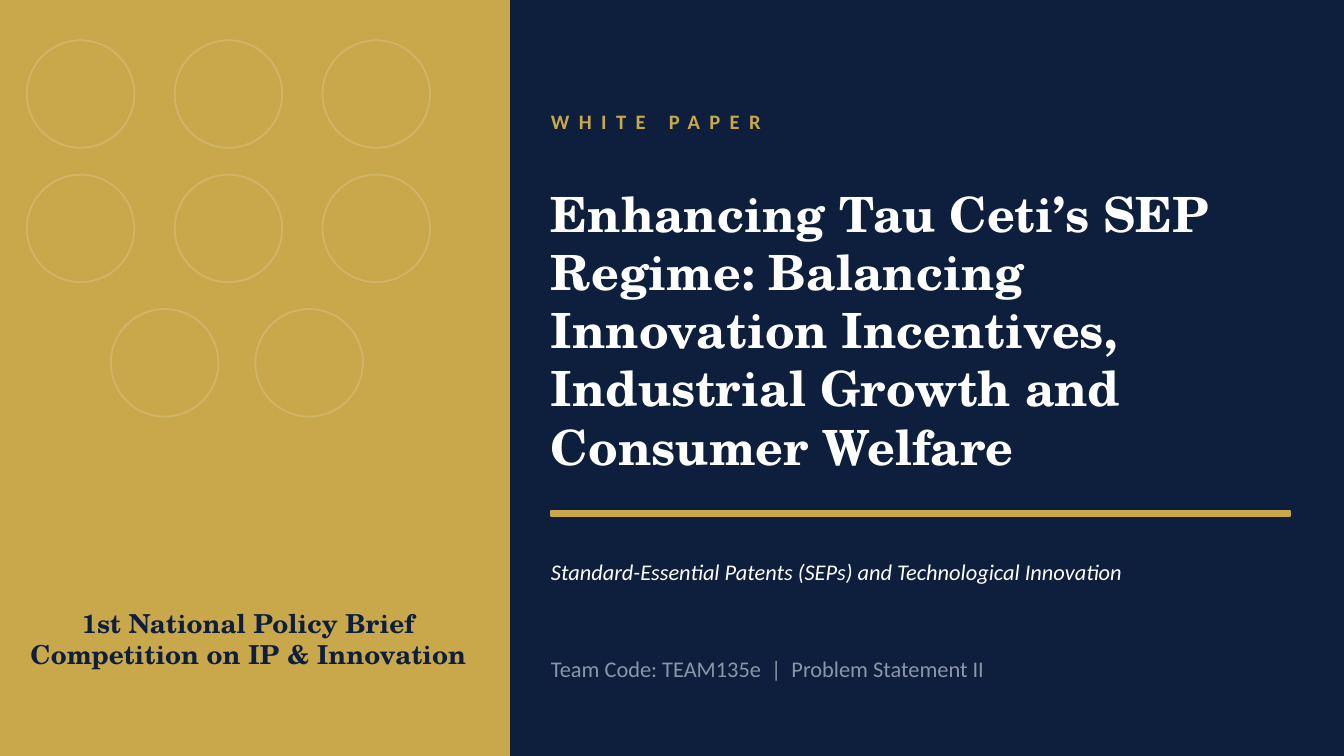
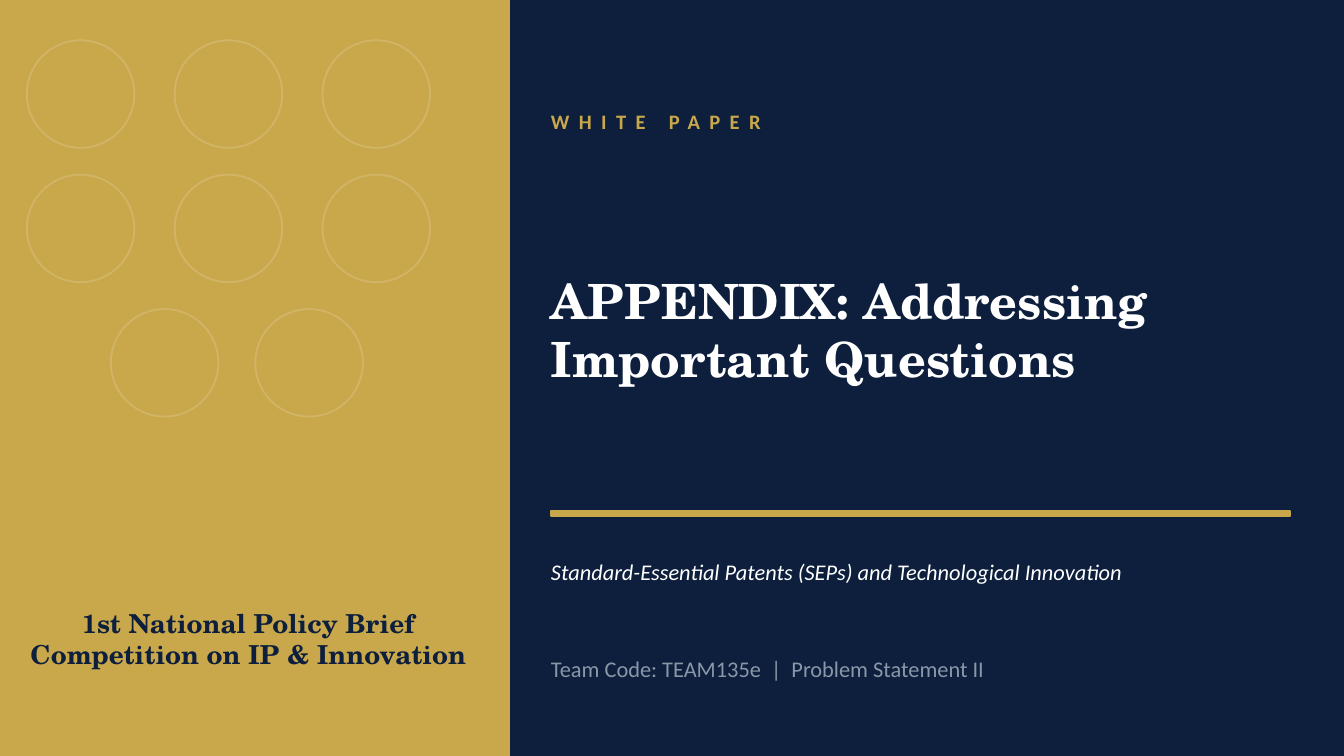
"""Build the white paper title slide and its appendix divider."""
from lxml.etree import SubElement
from pptx import Presentation
from pptx.dml.color import RGBColor
from pptx.enum.shapes import MSO_SHAPE
from pptx.enum.text import MSO_ANCHOR, PP_ALIGN
from pptx.oxml.ns import qn
from pptx.util import Emu, Pt

GOLD, NAVY, WHITE, GREY = "C9A84C", "0D1F3C", "FFFFFF", "8A97A8"
SANS, SERIF = "Calibri", "TeX Gyre Schola"
SCALE = 4572
WIDE, HIGH, SPLIT = 2000, 1125, 760
LEFT, SPAN = 820, 1120

SLIDES = [
    (NAVY, "Enhancing Tau Ceti’s SEP Regime: Balancing Innovation Incentives, "
           "Industrial Growth and Consumer Welfare"),
    (WHITE, "APPENDIX: Addressing Important Questions"),
]
TAG = ["WHITE PAPER"]
TOPIC = ["Standard-Essential Patents (SEPs) and Technological Innovation"]
TEAM = ["Team Code: TEAM135e  |  Problem Statement II"]
EVENT = ["1st National Policy Brief", "Competition on IP & Innovation"]

STYLES = {
    "tag": (dict(name=SANS, size=Pt(11), bold=True), GOLD, PP_ALIGN.LEFT),
    "title": (dict(name=SERIF, size=Pt(26), bold=True), WHITE, PP_ALIGN.LEFT),
    "topic": (dict(name=SANS, size=Pt(12), italic=True), WHITE, PP_ALIGN.JUSTIFY),
    "team": (dict(name=SANS, size=Pt(12)), GREY, PP_ALIGN.LEFT),
    "event": (dict(name=SERIF, size=Pt(14), bold=True), NAVY, PP_ALIGN.CENTER),
}
RING, PITCH = 160, 200
RINGS = [(40, 220, 3), (40, 220, 3), (165, 215, 2)]


def px(*sizes):
    return [Emu(size * SCALE) for size in sizes]


def tint(color, code):
    color.rgb = RGBColor.from_string(code)


def draw(slide, kind, box, fill, line):
    shape = slide.shapes.add_shape(kind, *px(*box))
    shape.shadow.inherit = False
    shape.fill.solid()
    tint(shape.fill.fore_color, fill)
    tint(shape.line.color, line)
    shape.line.width = Pt(1)
    return shape


def ring(slide, left, top):
    shape = draw(slide, MSO_SHAPE.OVAL, (left, top, RING, RING), GOLD, WHITE)
    for node, alpha in zip(shape._element.iter(qn("a:srgbClr")), (30, 15)):
        SubElement(node, qn("a:alpha"), val=str(alpha * 1000))


def write(slide, box, lines, style, gap=0):
    font, color, align = STYLES[style]
    frame = slide.shapes.add_textbox(*px(*box)).text_frame
    frame.word_wrap = True
    frame.vertical_anchor = MSO_ANCHOR.MIDDLE
    for side in ("left", "right", "top", "bottom"):
        setattr(frame, f"margin_{side}", 0)
    for spot, line in enumerate(lines):
        para = frame.add_paragraph() if spot else frame.paragraphs[0]
        para.alignment = align
        run = para.add_run()
        run.text = line
        for key, value in font.items():
            setattr(run.font, key, value)
        tint(run.font.color, color)
        if gap:
            run._r.get_or_add_rPr().set("spc", str(gap * 100))


def cover(deck, back, title):
    slide = deck.slides.add_slide(deck.slide_layouts[6])
    slide.background.fill.solid()
    tint(slide.background.fill.fore_color, back)
    bar = MSO_SHAPE.RECTANGLE
    draw(slide, bar, (0, 0, SPLIT, HIGH), GOLD, GOLD)
    draw(slide, bar, (SPLIT, 0, WIDE - SPLIT, HIGH), NAVY, NAVY)
    for row, (start, step, count) in enumerate(RINGS):
        for col in range(count):
            ring(slide, start + col * step, 60 + row * PITCH)
    write(slide, (LEFT, 140, SPAN, 80), TAG, "tag", gap=5)
    write(slide, (LEFT, 230, SPAN, 520), [title], "title")
    draw(slide, bar, (LEFT, 760, 1100, 8), GOLD, GOLD)
    write(slide, (LEFT, 780, SPAN, 140), TOPIC, "topic")
    write(slide, (LEFT, 960, SPAN, 70), TEAM, "team")
    write(slide, (40, 860, 660, 180), EVENT, "event")


def main():
    deck = Presentation()
    deck.slide_width, deck.slide_height = px(WIDE, HIGH)
    for back, title in SLIDES:
        cover(deck, back, title)
    deck.save("out.pptx")


if __name__ == "__main__":
    main()
